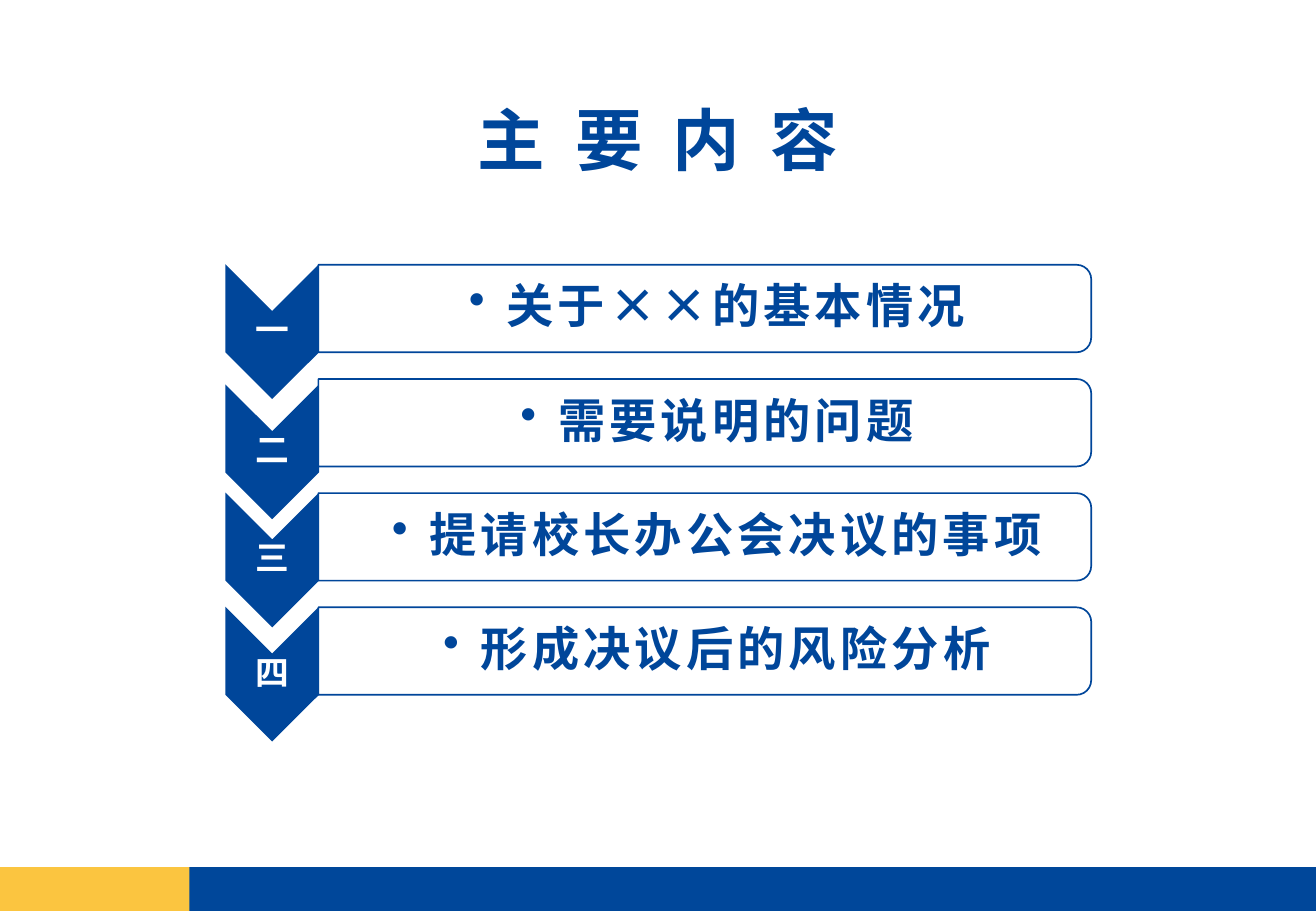
from lxml.etree import SubElement
from pptx import Presentation
from pptx.dml.color import RGBColor
from pptx.enum.shapes import MSO_SHAPE
from pptx.enum.text import MSO_ANCHOR, MSO_AUTO_SIZE, PP_ALIGN
from pptx.oxml.ns import qn
from pptx.util import Inches, Pt

COLORS = {"blue": "00469A", "base": "00479A", "gold": "FBC540", "white": "FFFFFF"}
FONT = "Noto Sans CJK SC"
WIDE, HIGH = 10.83, 7.5

deck = Presentation()
deck.slide_width, deck.slide_height = Inches(WIDE), Inches(HIGH)
slide = deck.slides.add_slide(deck.slide_layouts[6])


def draw(kind, mid_x, mid_y, wide, high, fill, turn=0):
    shape = slide.shapes.add_shape(
        kind, Inches(mid_x - wide / 2), Inches(mid_y - high / 2), Inches(wide), Inches(high))
    shape.rotation = turn
    shape.shadow.inherit = False
    shape.fill.solid()
    shape.fill.fore_color.rgb = RGBColor.from_string(COLORS[fill])
    shape.line.fill.background()
    return shape


def write(text, mid_x, mid_y, wide, high, size, color, pad, lead, track=0):
    box = slide.shapes.add_textbox(
        Inches(mid_x - wide / 2), Inches(mid_y - high / 2), Inches(wide), Inches(high))
    frame = box.text_frame
    frame.word_wrap = True
    frame.margin_left, frame.margin_top, frame.margin_right, frame.margin_bottom = map(Inches, pad)
    frame.text = text
    para = frame.paragraphs[0]
    para.alignment = PP_ALIGN.CENTER
    para.line_spacing = lead
    run = para.runs[0]
    run.font.size, run.font.bold, run.font.name = Pt(size), True, FONT
    run.font.color.rgb = RGBColor.from_string(COLORS[color])
    props = run._r.get_or_add_rPr()
    props.set("spc", str(int(track * 100)))
    SubElement(props, qn("a:ea"), typeface=FONT)
    return frame


foot = 0.36
gold = 1.56
foot_y = HIGH - foot / 2
draw(MSO_SHAPE.RECTANGLE, WIDE / 2, foot_y, WIDE, foot, "base")
draw(MSO_SHAPE.RECTANGLE, gold / 2, foot_y, gold, foot, "gold")

title = write("主 要 内 容", WIDE / 2, 1.13, WIDE, 0.81, 40, "blue",
              (0.1, 0.05, 0.1, 0.05), 1.05, 4.5)
title.auto_size = MSO_AUTO_SIZE.SHAPE_TO_FIT_TEXT

items = [
    ("一", "关于××的基本情况", 0.19),
    ("二", "需要说明的问题", 0.24),
    ("三", "提请校长办公会决议的事项", 0.19),
    ("四", "形成决议后的风险分析", 0.19),
]
top, pitch = 2.54, 0.94
mark_x, bar_x = 2.24, 5.8

for row, (mark, topic, drop) in enumerate(items):
    bar_y = top + row * pitch
    mark_y = bar_y + drop
    draw(MSO_SHAPE.CHEVRON, mark_x, mark_y, 1.11, 0.77, "blue", 90)
    label = write(mark, mark_x, mark_y, 0.77, 0.33, 20, "white", [0.01] * 4, 0.9)
    label.vertical_anchor = MSO_ANCHOR.MIDDLE
    label.paragraphs[0].space_after = Pt(7)

    bar = draw(MSO_SHAPE.ROUND_2_SAME_RECTANGLE, bar_x, bar_y, 0.72, 6.36, "white", 90)
    SubElement(bar._element.spPr.find(".//" + qn("a:srgbClr")), qn("a:alpha"), val="90000")
    bar.line.color.rgb = RGBColor.from_string(COLORS["blue"])
    bar.line.width = Pt(1)

    body = write(topic, bar_x, bar_y, 6.32, 0.65, 28, "blue", (0.22, 0.02, 0.02, 0.02), 0.9, 2.5)
    body.vertical_anchor = MSO_ANCHOR.MIDDLE
    para = body.paragraphs[0]
    para.space_after = Pt(4.2)
    props = para._p.get_or_add_pPr()
    props.set("marL", str(Inches(0.31)))
    props.set("indent", str(-Inches(0.31)))
    SubElement(props, qn("a:buChar"), char="•")

deck.save("out.pptx")
